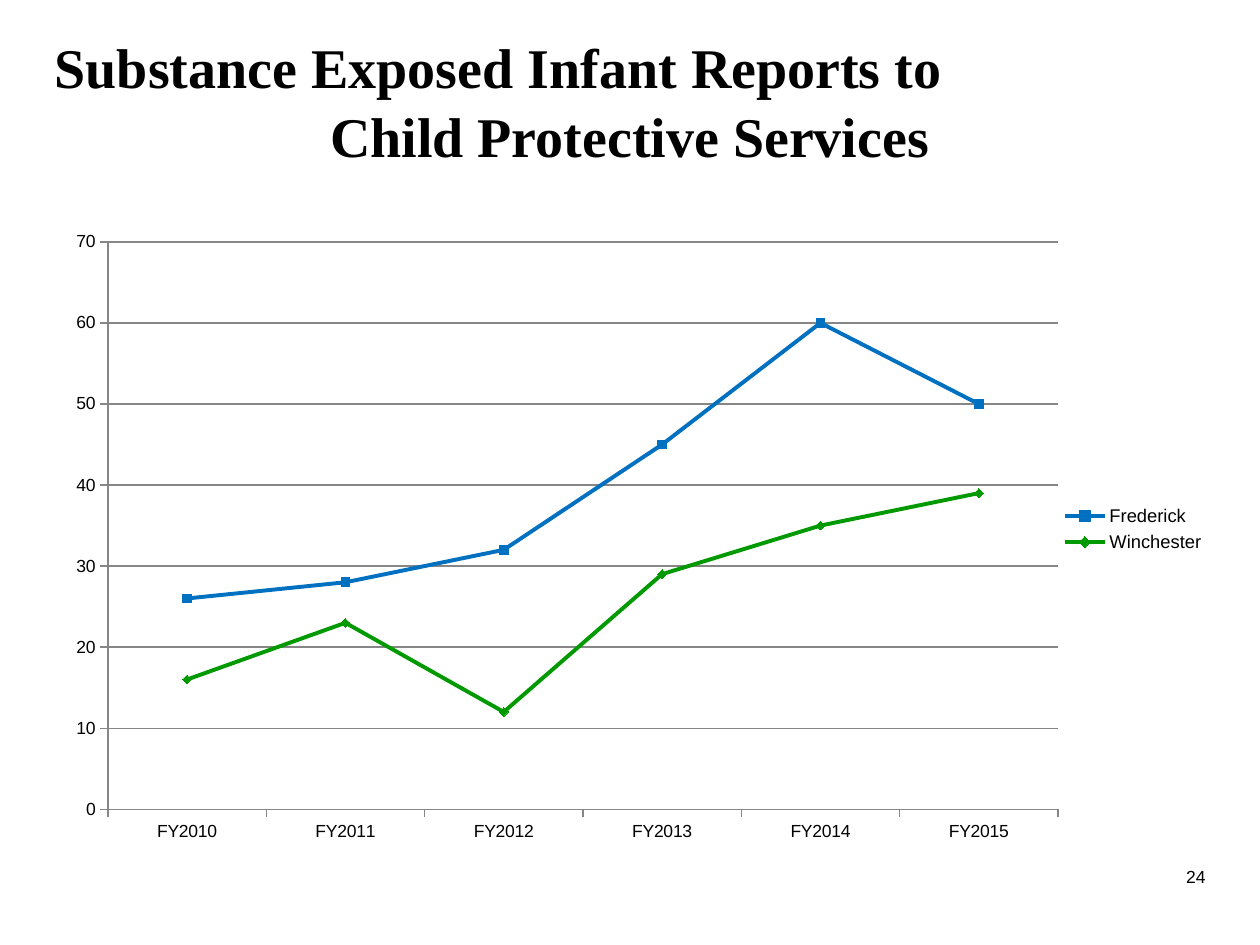
from dataclasses import dataclass

import pptx
import pptx.chart.data
import pptx.dml.color
import pptx.enum.chart
import pptx.enum.text
import pptx.oxml
import pptx.oxml.ns
import pptx.util

ALIGN = pptx.enum.text.PP_ALIGN
MARKER = pptx.enum.chart.XL_MARKER_STYLE


@dataclass(frozen=True)
class Theme:
    text: str = "000000"
    grid: str = "868686"
    serif: str = "Times New Roman"
    sans: str = "Arial"
    title: float = 32
    body: float = 10
    legend: float = 10.5
    series_line: float = 2.25
    axis_line: float = 0.75
    marker: int = 5


@dataclass(frozen=True)
class Series:
    name: str
    values: tuple[int, ...]
    color: str
    marker: MARKER


@dataclass(frozen=True)
class Box:
    left: float
    top: float
    width: float
    height: float

    def lengths(self) -> tuple[int, ...]:
        return tuple(pptx.util.Inches(v) for v in (
            self.left * WIDTH, self.top * HEIGHT, self.width * WIDTH, self.height * HEIGHT))


WIDTH, HEIGHT = 10, 7.5
MARGIN = 1 / 30
CONTENT = 1 - 2 * MARGIN
TITLE_BOX = Box(MARGIN, 0.02, CONTENT, 0.17)
CHART_BOX = Box(MARGIN, 0.22, CONTENT, 0.68)
NUMBER_BOX = Box(1 - MARGIN - 0.23, 0.91, 0.23, 0.07)
PLOT = {"x": 0.056, "y": 0.053, "w": 0.808, "h": 0.883}
YEARS = [f"FY{year}" for year in range(2010, 2016)]
REPORTS = (
    Series("Frederick", (26, 28, 32, 45, 60, 50), "0070C0", MARKER.SQUARE),
    Series("Winchester", (16, 23, 12, 29, 35, 39), "009900", MARKER.DIAMOND),
)
THEME = Theme()


def rgb(color: str) -> pptx.dml.color.RGBColor:
    return pptx.dml.color.RGBColor.from_string(color)


def set_font(font, size: float, name: str = THEME.sans, bold: bool = False) -> None:
    font.size, font.name, font.bold = pptx.util.Pt(size), name, bold
    font.color.rgb = rgb(THEME.text)


def set_line(line, color: str, width: float) -> None:
    line.color.rgb = rgb(color)
    line.width = pptx.util.Pt(width)


def write(p, text: str, *, size: float, align: ALIGN, name: str = THEME.sans,
          bold: bool = False, spacing: float = 1.0) -> None:
    p.alignment = align
    p.line_spacing = spacing
    p.space_before = pptx.util.Pt(0)
    r = p.add_run()
    r.text = text
    set_font(r.font, size, name, bold)


def add_title(s) -> None:
    sp = s.shapes.title
    sp.left, sp.top, sp.width, sp.height = TITLE_BOX.lengths()
    tf = sp.text_frame
    tf.word_wrap = True
    tf.vertical_anchor = pptx.enum.text.MSO_ANCHOR.MIDDLE
    lines = (("Substance Exposed Infant Reports to", ALIGN.LEFT),
             ("Child Protective Services", ALIGN.CENTER))
    for i, (text, align) in enumerate(lines):
        p = tf.add_paragraph() if i else tf.paragraphs[0]
        write(p, text, size=THEME.title, align=align, name=THEME.serif, bold=True, spacing=1.04)


def set_plot_layout(chart) -> None:
    area = chart.plots[0]._element.getparent()
    for old in area.findall(pptx.oxml.ns.qn("c:layout")):
        area.remove(old)
    sizes = "".join(f'<c:{key} val="{value}"/>' for key, value in PLOT.items())
    area.insert(0, pptx.oxml.parse_xml(
        f'<c:layout {pptx.oxml.ns.nsdecls("c")}><c:manualLayout>'
        '<c:layoutTarget val="inner"/><c:xMode val="edge"/><c:yMode val="edge"/>'
        f'{sizes}</c:manualLayout></c:layout>'))


def add_report_chart(s) -> None:
    data = pptx.chart.data.CategoryChartData(number_format="General")
    data.categories = YEARS
    for item in REPORTS:
        data.add_series(item.name, item.values)
    chart = s.shapes.add_chart(
        pptx.enum.chart.XL_CHART_TYPE.LINE_MARKERS, *CHART_BOX.lengths(), data).chart
    set_font(chart.font, THEME.body)
    chart.has_title = False
    chart.has_legend = True
    chart.legend.position = pptx.enum.chart.XL_LEGEND_POSITION.RIGHT
    chart.legend.include_in_layout = False
    set_font(chart.legend.font, THEME.legend)
    for axis in (chart.category_axis, chart.value_axis):
        axis.major_tick_mark = pptx.enum.chart.XL_TICK_MARK.OUTSIDE
        set_line(axis.format.line, THEME.grid, THEME.axis_line)
    values = chart.value_axis
    values.minimum_scale, values.maximum_scale, values.major_unit = 0, 70, 10
    values.has_major_gridlines = True
    set_line(values.major_gridlines.format.line, THEME.grid, THEME.axis_line)
    chart.plots[0].vary_by_categories = False
    for series, item in zip(chart.plots[0].series, REPORTS):
        series.smooth = False
        set_line(series.format.line, item.color, THEME.series_line)
        series.marker.style = item.marker
        series.marker.size = THEME.marker
        series.marker.format.fill.solid()
        series.marker.format.fill.fore_color.rgb = rgb(item.color)
        set_line(series.marker.format.line, item.color, THEME.axis_line)
    set_plot_layout(chart)


def add_page_number(s) -> None:
    tf = s.shapes.add_textbox(*NUMBER_BOX.lengths()).text_frame
    tf.word_wrap = True
    write(tf.paragraphs[0], "24", size=THEME.body, align=ALIGN.RIGHT)


def main() -> None:
    prs = pptx.Presentation()
    prs.slide_width, prs.slide_height = pptx.util.Inches(WIDTH), pptx.util.Inches(HEIGHT)
    s = prs.slides.add_slide(prs.slide_layouts.get_by_name("Title Only"))
    add_title(s)
    add_report_chart(s)
    add_page_number(s)
    prs.save("out.pptx")


if __name__ == "__main__":
    main()
